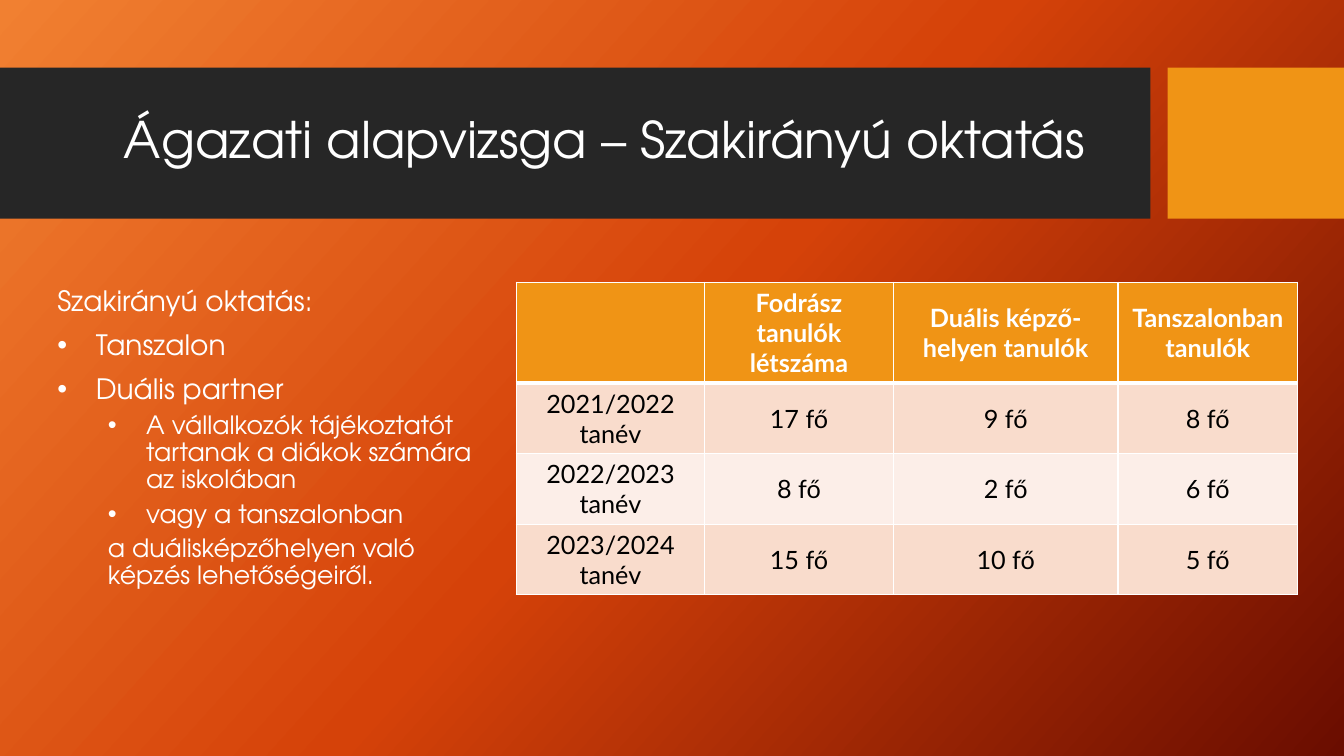
from dataclasses import dataclass

from lxml.etree import SubElement
from pptx import Presentation
from pptx.dml.color import RGBColor
from pptx.enum.shapes import MSO_SHAPE
from pptx.enum.text import MSO_ANCHOR, MSO_AUTO_SIZE, PP_ALIGN
from pptx.oxml.ns import qn
from pptx.slide import Slide
from pptx.table import _Cell as Cell
from pptx.text.text import Font, _Paragraph as Paragraph
from pptx.util import Inches, Pt


@dataclass(frozen=True)
class Theme:
    band: str = "262626"
    accent: str = "F09415"
    light: str = "FFFFFF"
    dark: str = "000000"
    row_fills: tuple[str, str] = ("F9DCCC", "FCEEE8")
    gradient: tuple[tuple[int, str], ...] = ((0, "F18031"), (50, "D54209"), (100, "6A0D00"))
    gradient_angle: int = 42
    text_font: str = "TeX Gyre Adventor"
    table_font: str = "Lato"
    title_size: int = 36
    body_size: int = 20
    small_size: int = 18


@dataclass(frozen=True)
class Box:
    left: float
    top: float
    width: float
    height: float

    def lengths(self) -> tuple[int, int, int, int]:
        return Inches(self.left), Inches(self.top), Inches(self.width), Inches(self.height)


@dataclass(frozen=True)
class Band:
    box: Box
    color: str


@dataclass(frozen=True)
class ListItem:
    text: str
    level: int = 0
    margin: float = 0
    bullet: bool = False


THEME = Theme()
HANGING = 0.38
BANDS = [
    Band(Box(0, 0.67, 11.41, 1.5), THEME.band),
    Band(Box(11.58, 0.67, 1.75, 1.5), THEME.accent),
]
TITLE = "Ágazati alapvizsga – Szakirányú oktatás"
TITLE_BOX = Box(0.74, 0.82, 10.51, 1.18)
BODY_BOX = Box(0.47, 2.38, 4.32, 3.94)
ITEMS = [
    ListItem("Szakirányú oktatás:"),
    ListItem("Tanszalon", 0, 0.38, True),
    ListItem("Duális partner", 0, 0.38, True),
    ListItem("A vállalkozók tájékoztatót tartanak a diákok számára az iskolában", 1, 0.88, True),
    ListItem("vagy a tanszalonban", 1, 0.88, True),
    ListItem("a duálisképzőhelyen való képzés lehetőségeiről.", 1, 0.5),
]
TABLE_BOX = Box(5.12, 2.8, 7.75, 3.1)
COLUMN_WIDTHS = [1.87, 1.87, 2.23, 1.78]
ROW_HEIGHTS = [1, 0.7, 0.7, 0.7]
TABLE_ROWS = [
    ["", "Fodrász tanulók létszáma", "Duális képző-helyen tanulók", "Tanszalonban tanulók"],
    ["2021/2022 tanév", "17 fő", "9 fő", "8 fő"],
    ["2022/2023 tanév", "8 fő", "2 fő", "6 fő"],
    ["2023/2024 tanév", "15 fő", "10 fő", "5 fő"],
]


def style_font(font: Font, name: str, size: int, color: str, bold: bool = False) -> None:
    font.name = name
    font.size = Pt(size)
    font.bold = bold
    font.color.rgb = RGBColor.from_string(color)


def paint_background(slide: Slide) -> None:
    fill = slide.background.fill
    fill.gradient()
    # python-pptx measures gradient angles counter-clockwise
    fill.gradient_angle = 360 - THEME.gradient_angle
    stops = next(slide.element.iter(qn("a:gsLst")))
    for stop in list(stops):
        stops.remove(stop)
    for percent, color in THEME.gradient:
        stop = SubElement(stops, qn("a:gs"), pos=str(percent * 1000))
        SubElement(stop, qn("a:srgbClr"), val=color)


def add_bands(slide: Slide) -> None:
    """Draw the header bands behind the placeholders."""
    for position, band in enumerate(BANDS, start=2):
        shape = slide.shapes.add_shape(MSO_SHAPE.RECTANGLE, *band.box.lengths())
        shape.shadow.inherit = False
        shape.fill.solid()
        shape.fill.fore_color.rgb = RGBColor.from_string(band.color)
        shape.line.fill.background()
        slide.shapes.element.insert(position, shape.element)


def place_placeholder(shape, box: Box) -> None:
    shape.left, shape.top, shape.width, shape.height = box.lengths()
    shape.text_frame.word_wrap = True
    shape.text_frame.auto_size = MSO_AUTO_SIZE.NONE
    shape.text_frame.vertical_anchor = MSO_ANCHOR.MIDDLE


def fill_title(slide: Slide) -> None:
    title = slide.shapes.title
    place_placeholder(title, TITLE_BOX)
    title.text_frame.text = TITLE
    paragraph = title.text_frame.paragraphs[0]
    paragraph.alignment = PP_ALIGN.CENTER
    paragraph.line_spacing = 0.9
    style_font(paragraph.runs[0].font, THEME.text_font, THEME.title_size, THEME.light)


def format_item(paragraph: Paragraph, item: ListItem, first: bool) -> None:
    paragraph.level = item.level
    paragraph.line_spacing = 0.9
    paragraph.space_before = Pt(0 if first else 5 if item.level else 10)
    properties = paragraph._p.get_or_add_pPr()
    properties.set("marL", str(Inches(item.margin)))
    properties.set("indent", str(Inches(-HANGING if item.bullet else 0)))
    if item.bullet:
        SubElement(properties, qn("a:buFont"), typeface="Arial")
        SubElement(properties, qn("a:buChar"), char="•")
    else:
        SubElement(properties, qn("a:buNone"))
    size = THEME.small_size if item.level else THEME.body_size
    style_font(paragraph.runs[0].font, THEME.text_font, size, THEME.light)


def fill_body(slide: Slide) -> None:
    body = slide.placeholders[1]
    place_placeholder(body, BODY_BOX)
    body.text_frame.text = "\n".join(item.text for item in ITEMS)
    for index, (paragraph, item) in enumerate(zip(body.text_frame.paragraphs, ITEMS)):
        format_item(paragraph, item, index == 0)


def add_borders(cell: Cell, header: bool, below_header: bool) -> None:
    properties = cell._tc.get_or_add_tcPr()
    widths = {"lnL": 1, "lnR": 1, "lnT": 3 if below_header else 1, "lnB": 3 if header else 1}
    for position, (side, width) in enumerate(widths.items()):
        line = SubElement(properties, qn(f"a:{side}"), w=str(Pt(width)))
        fill = SubElement(line, qn("a:solidFill"))
        SubElement(fill, qn("a:srgbClr"), val=THEME.light)
        properties.insert(position, line)


def format_cell(cell: Cell, text: str, row: int) -> None:
    header = row == 0
    cell.text_frame.text = text
    cell.vertical_anchor = MSO_ANCHOR.MIDDLE
    cell.fill.solid()
    color = THEME.accent if header else THEME.row_fills[(row - 1) % 2]
    cell.fill.fore_color.rgb = RGBColor.from_string(color)
    add_borders(cell, header, row == 1)
    paragraph = cell.text_frame.paragraphs[0]
    paragraph.alignment = PP_ALIGN.CENTER
    text_color = THEME.light if header else THEME.dark
    for run in paragraph.runs:
        style_font(run.font, THEME.table_font, THEME.small_size, text_color, header)


def add_student_table(slide: Slide) -> None:
    table = slide.shapes.add_table(
        len(TABLE_ROWS), len(COLUMN_WIDTHS), *TABLE_BOX.lengths()
    ).table
    for column, width in zip(table.columns, COLUMN_WIDTHS):
        column.width = Inches(width)
    for row, height in zip(table.rows, ROW_HEIGHTS):
        row.height = Inches(height)
    for row_index, texts in enumerate(TABLE_ROWS):
        for column_index, text in enumerate(texts):
            format_cell(table.cell(row_index, column_index), text, row_index)


def main() -> None:
    presentation = Presentation()
    presentation.slide_width = Inches(13.33)
    presentation.slide_height = Inches(7.5)
    slide = presentation.slides.add_slide(presentation.slide_layouts[1])
    paint_background(slide)
    add_bands(slide)
    fill_title(slide)
    fill_body(slide)
    add_student_table(slide)
    presentation.save("out.pptx")


if __name__ == "__main__":
    main()
